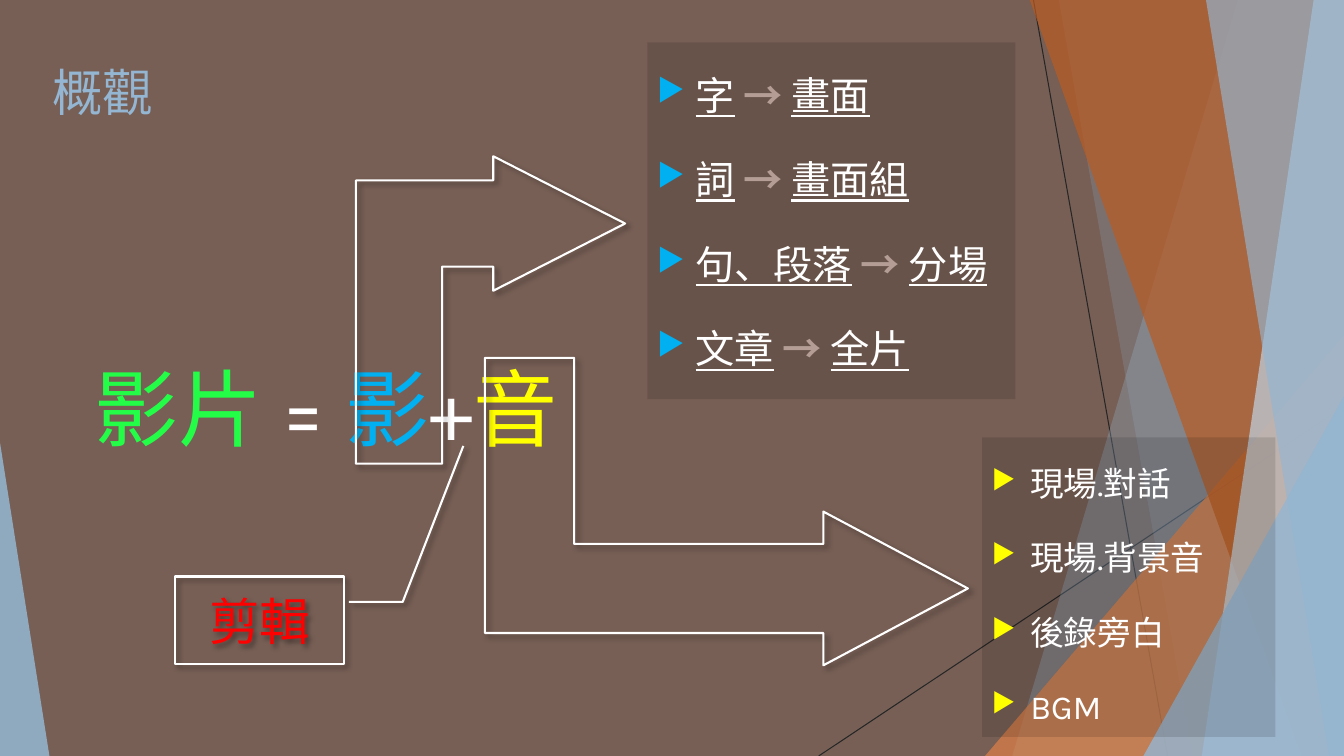
from lxml import etree
from pptx import Presentation
from pptx.dml.color import RGBColor
from pptx.enum.shapes import MSO_CONNECTOR, MSO_SHAPE
from pptx.enum.text import MSO_ANCHOR, PP_ALIGN
from pptx.oxml.ns import qn
from pptx.util import Inches, Pt

LINE = MSO_CONNECTOR.STRAIGHT
RECTANGLE = MSO_SHAPE.RECTANGLE
TRIANGLE = MSO_SHAPE.ISOSCELES_TRIANGLE
BENT_ARROW = MSO_SHAPE.BENT_UP_ARROW
CALLOUT = MSO_SHAPE.LINE_CALLOUT_2
TOP, MIDDLE = MSO_ANCHOR.TOP, MSO_ANCHOR.MIDDLE
LEFT, CENTER, JUSTIFY = PP_ALIGN.LEFT, PP_ALIGN.CENTER, PP_ALIGN.JUSTIFY

WIDTH, HEIGHT = 13.33, 7.5
FONT = "Karla"
WHITE, BLUE, CYAN, YELLOW = "FFFFFF", "94B6D2", "00B0F0", "FFFF00"
RULES = [((10.25, 0), (11.58, HEIGHT)), ((WIDTH, 4.03), (8.12, HEIGHT))]
FACETS = [
    ("band", (12.28, 10.04), BLUE, 30),
    ("band", (10.5, 11.83), BLUE, 20),
    ("triangle", (9.77, 3.33, 3.56, 4.17, 1), "DD8047", 72),
    ("band", (10.21, 12.91), "B95B22", 70),
    ("band", (13.03, 11.92), "BFD3E4", 70),
    ("band", (11.96, 13.18), BLUE, 65),
    ("triangle", (11.34, 3.93, 1.99, 3.57, 1), BLUE, 80),
    ("triangle", (0, 4.39, 0.49, 3.11, 0), BLUE, 85),
]
PICTURE_UNITS = [("字", "畫面"), ("詞", "畫面組"), ("句、段落", "分場"), ("文章", "全片")]
SOUND_KINDS = ["現場.對話", "現場.背景音", "後錄旁白", "BGM"]
EQUATION = [("影片 ", "23FD47"), ("= ", WHITE), ("影", CYAN), ("+", WHITE), ("音", YELLOW)]


def rgb(value):
    """Turn a hex string into a colour."""
    return RGBColor.from_string(value)


def add_node(parent, tag, **attributes):
    """Append an XML child with the given attributes."""
    node = etree.SubElement(parent, qn(tag))
    for name, value in attributes.items():
        node.set(name, str(value))
    return node


def paint(shape, color, opacity):
    """Fill a shape with a translucent colour and no outline."""
    shape.shadow.inherit = False
    shape.line.fill.background()
    shape.fill.solid()
    shape.fill.fore_color.rgb = rgb(color)
    solid = shape.fill._xPr.find(qn("a:solidFill"))
    add_node(solid[0], "a:alpha", val=opacity * 1000)


def outline(shape, adjustments):
    """Give a shape a white outline, a soft shadow and its proportions."""
    for index, value in enumerate(adjustments):
        shape.adjustments[index] = value
    shape.fill.background()
    shape.line.color.rgb = rgb(WHITE)
    shape.line.width = Pt(1.5)
    shape.shadow.inherit = False
    effects = shape._element.spPr.find(qn("a:effectLst"))
    shadow = add_node(effects, "a:outerShdw", blurRad=Pt(4), dist=Pt(3),
                      dir=45 * 60000, algn="tl", rotWithShape=0)
    black = add_node(shadow, "a:srgbClr", val="000000")
    add_node(black, "a:alpha", val=40000)


def add_rule(slide, start, end):
    """Draw one thin dark background line."""
    rule = slide.shapes.add_connector(LINE, *map(Inches, start + end))
    rule.line.color.rgb = rgb("262626")
    rule.line.width = Pt(0.75)
    add_node(rule._element.spPr, "a:effectLst")


def add_facet(slide, kind, geometry, color, opacity):
    """Draw a background band reaching the right edge, or a triangle."""
    if kind == "band":
        top, bottom = geometry
        corners = [(WIDTH, -0.01), (WIDTH, HEIGHT), (bottom, HEIGHT)]
        builder = slide.shapes.build_freeform(Inches(top), Inches(-0.01))
        builder.add_line_segments([(Inches(x), Inches(y)) for x, y in corners])
        facet = builder.convert_to_shape()
    else:
        *box, apex = geometry
        facet = slide.shapes.add_shape(TRIANGLE, *map(Inches, box))
        facet.adjustments[0] = apex
    paint(facet, color, opacity)


def write(paragraph, runs, size):
    """Add runs of text, colour and optional font settings."""
    for text, color, *extra in runs:
        run = paragraph.add_run()
        run.text = text
        style = {"name": FONT, "size": Pt(size), **(extra[0] if extra else {})}
        for name, value in style.items():
            setattr(run.font, name, value)
        run.font.color.rgb = rgb(color)


def add_label(slide, box, runs, size):
    """Add a wrapping text box with a single paragraph."""
    frame = slide.shapes.add_textbox(*map(Inches, box)).text_frame
    frame.word_wrap = True
    write(frame.paragraphs[0], runs, size)


def add_list(slide, box, items, size, bullet_color, alignment):
    """Add a shaded panel with a bulleted list."""
    panel = slide.shapes.add_shape(RECTANGLE, *map(Inches, box))
    paint(panel, "000000", 12)
    frame = panel.text_frame
    frame.word_wrap = True
    frame.vertical_anchor = TOP
    layout = {"alignment": alignment, "line_spacing": 1.5, "space_before": Pt(10)}
    for index, runs in enumerate(items):
        paragraph = frame.add_paragraph() if index else frame.paragraphs[0]
        for name, value in layout.items():
            setattr(paragraph, name, value)
        props = paragraph._p.get_or_add_pPr()
        props.set("marL", str(Inches(0.38)))
        props.set("indent", str(-Inches(0.38)))
        add_node(add_node(props, "a:buClr"), "a:srgbClr", val=bullet_color)
        add_node(props, "a:buSzPct", val=80000)
        add_node(props, "a:buChar", char="▶")
        write(paragraph, runs, size)


def add_arrow(slide, box, adjustments, flips):
    """Add a bent arrow that ends pointing right."""
    arrow = slide.shapes.add_shape(BENT_ARROW, *map(Inches, box))
    outline(arrow, adjustments)
    arrow.rotation = 270
    for flip in flips:
        arrow._element.spPr.xfrm.set(flip, "1")


def add_callout(slide, box, adjustments, runs, size):
    """Add an outlined callout with centred text."""
    callout = slide.shapes.add_shape(CALLOUT, *map(Inches, box))
    outline(callout, adjustments)
    callout.text_frame.vertical_anchor = MIDDLE
    paragraph = callout.text_frame.paragraphs[0]
    paragraph.alignment = CENTER
    write(paragraph, runs, size)


def mapping_runs(source, target):
    """Return the runs that link a unit of text to a unit of film."""
    underlined = {"underline": True}
    return [(source, WHITE, underlined), (" ", WHITE),
            ("→ ", "B39D94", {"bold": True}), (target, WHITE, underlined)]


def main():
    """Build the overview slide and save it."""
    deck = Presentation()
    deck.slide_width, deck.slide_height = Inches(WIDTH), Inches(HEIGHT)
    slide = deck.slides.add_slide(deck.slide_layouts[6])
    slide.background.fill.solid()
    slide.background.fill.fore_color.rgb = rgb("775F55")

    for start, end in RULES:
        add_rule(slide, start, end)
    for facet in FACETS:
        add_facet(slide, *facet)

    add_label(slide, (0.42, 0.56, 1.78, 1.44), [("概觀", BLUE)], 36)
    add_list(slide, (6.42, 0.42, 3.65, 3.54),
             [mapping_runs(*pair) for pair in PICTURE_UNITS], 28, CYAN, JUSTIFY)
    add_list(slide, (9.74, 4.34, 2.91, 2.97),
             [[(kind, WHITE)] for kind in SOUND_KINDS], 24, YELLOW, LEFT)
    add_label(slide, (0.84, 3.49, 4.94, 1.11), EQUATION, 60)
    add_arrow(slide, (3.34, 1.74, 3.05, 2.67), (0.32, 0.25, 0.49), ["flipV"])
    add_arrow(slide, (5.68, 2.68, 3.05, 4.79), (0.29, 0.25, 0.47), ["flipH", "flipV"])
    add_callout(slide, (1.74, 5.72, 1.67, 0.87),
                (0.29, 1.03, 0.29, 1.35, -1.49, 1.71), [("剪輯", "FF0000")], 36)
    deck.save("out.pptx")


if __name__ == "__main__":
    main()
